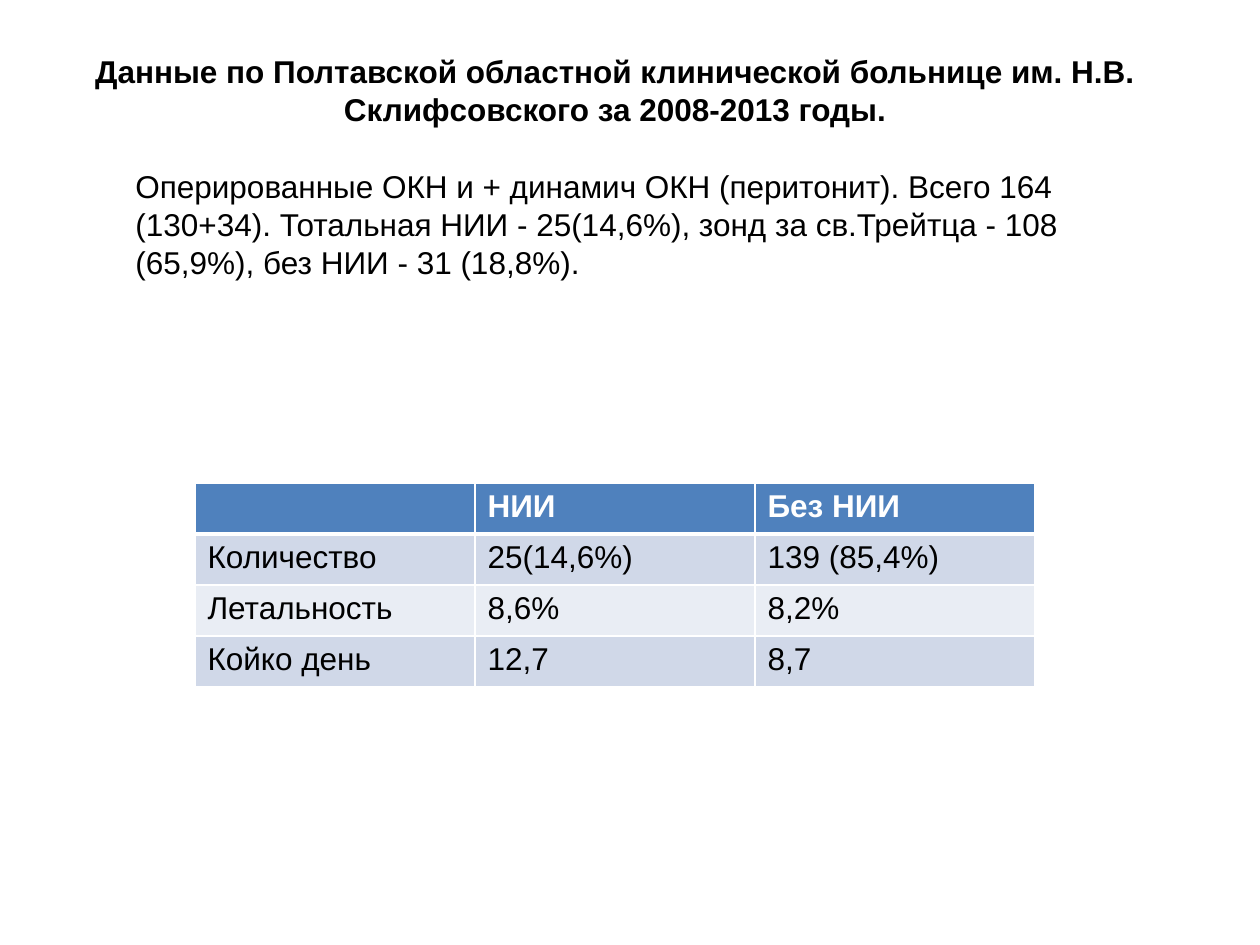
from dataclasses import dataclass

from lxml.etree import SubElement
from pptx import Presentation
from pptx.dml.color import RGBColor
from pptx.enum.text import MSO_AUTO_SIZE as AutoSize, PP_ALIGN as Align
from pptx.oxml.ns import qn
from pptx.util import Pt

PX = 914400 / 126


@dataclass(frozen=True)
class Theme:
    font: str = "Arial"
    size: int = 18
    ink: str = "000000"
    paper: str = "FFFFFF"
    header: str = "4F81BD"
    bands: tuple = ("D0D8E8", "E9EDF4")
    rule: int = 1
    header_rule: int = 3


def px(length):
    return round(length * PX)


def write(frame, text, *, theme, color, bold=False, align=None):
    para = frame.paragraphs[0]
    para.alignment = align
    span = para.add_run()
    span.text = text
    span.font.name = theme.font
    span.font.size = Pt(theme.size)
    span.font.bold = bold
    span.font.color.rgb = RGBColor.from_string(color)


def set_borders(cell, color, widths):
    """Draw the cell's edges; widths maps L, R, T, B to points, in that order."""
    properties = cell._tc.get_or_add_tcPr()
    for side, width in widths.items():
        line = SubElement(properties, qn(f"a:ln{side}"), w=str(Pt(width)))
        fill = SubElement(line, qn("a:solidFill"))
        SubElement(fill, qn("a:srgbClr"), val=color)


class SlideBuilder:
    def __init__(self, page, theme):
        self.page = page
        self.theme = theme

    def text(self, left, top, width, height, text, **style):
        box = self.page.shapes.add_textbox(*map(px, (left, top, width, height)))
        frame = box.text_frame
        frame.word_wrap = True
        frame.auto_size = AutoSize.SHAPE_TO_FIT_TEXT
        write(frame, text, theme=self.theme, color=self.theme.ink, **style)

    def table(self, left, top, column_width, row_height, rows):
        theme = self.theme
        columns = len(rows[0])
        table = self.page.shapes.add_table(
            len(rows), columns, px(left), px(top),
            px(column_width * columns), px(row_height * len(rows)),
        ).table
        for column in table.columns:
            column.width = px(column_width)
        for r, values in enumerate(rows):
            table.rows[r].height = px(row_height)
            is_header = r == 0
            fill = theme.header if is_header else theme.bands[(r - 1) % 2]
            widths = {
                "L": theme.rule,
                "R": theme.rule,
                "T": theme.header_rule if r == 1 else theme.rule,
                "B": theme.header_rule if is_header else theme.rule,
            }
            for c, value in enumerate(values):
                cell = table.cell(r, c)
                set_borders(cell, theme.paper, widths)
                cell.fill.solid()
                cell.fill.fore_color.rgb = RGBColor.from_string(fill)
                if value:
                    write(cell.text_frame, value, theme=theme, bold=is_header,
                          color=theme.paper if is_header else theme.ink)


def main():
    deck = Presentation()
    deck.slide_width, deck.slide_height = px(1260), px(945)
    page = deck.slides.add_slide(deck.slide_layouts[6])
    slide = SlideBuilder(page, Theme())

    slide.text(
        123, 161, 1002, 127,
        "Оперированные ОКН и + динамич ОКН (перитонит). Всего 164 (130+34). "
        "Тотальная НИИ - 25(14,6%), зонд за св.Трейтца - 108 (65,9%), "
        "без НИИ - 31 (18,8%).",
    )
    slide.text(
        64, 46, 1102, 127,
        "Данные по Полтавской областной клинической больнице им. Н.В. "
        "Склифсовского за 2008-2013 годы.",
        bold=True, align=Align.CENTER,
    )
    slide.table(195, 483, 280, 51, [
        ("", "НИИ", "Без НИИ"),
        ("Количество", "25(14,6%)", "139 (85,4%)"),
        ("Летальность", "8,6%", "8,2%"),
        ("Койко день", "12,7", "8,7"),
    ])
    deck.save("out.pptx")


if __name__ == "__main__":
    main()
